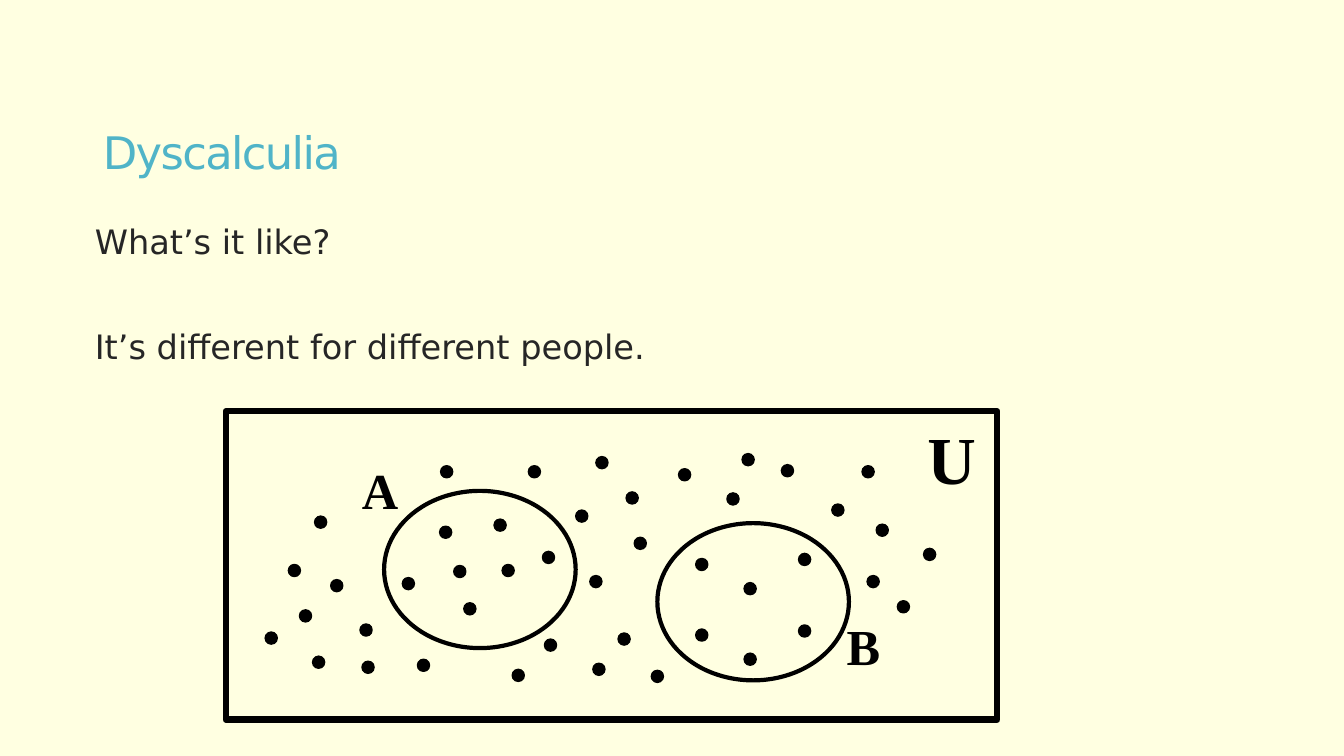
from pptx import Presentation
from pptx.dml.color import RGBColor
from pptx.enum.shapes import MSO_SHAPE as Shape
from pptx.enum.text import MSO_ANCHOR as Anchor, MSO_AUTO_SIZE as AutoSize, PP_ALIGN as Align
from pptx.oxml.xmlchemy import OxmlElement
from pptx.util import Inches, Pt

COLORS = {"paper": "FFFFE1", "title": "50B4C8", "body": "262626", "ink": "000000"}
DOT_SIZE = 0.12
SET_SIZE = (1.9, 1.56)

DOTS = {
    "A": [(4.36, 5.22), (4.9, 5.15), (5.38, 5.47), (3.99, 5.73), (4.5, 5.61),
          (4.98, 5.6), (4.6, 5.98)],
    "B": [(6.9, 5.54), (7.92, 5.49), (7.38, 5.78), (6.9, 6.24), (7.92, 6.2),
          (7.38, 6.48)],
    "outside": [
        (4.37, 4.62), (5.24, 4.62), (5.91, 4.53), (6.73, 4.65), (7.36, 4.5),
        (7.75, 4.61), (8.55, 4.62), (6.21, 4.88), (7.21, 4.89), (8.25, 5),
        (5.71, 5.06), (3.12, 5.12), (8.69, 5.2), (6.29, 5.33), (9.16, 5.44),
        (2.86, 5.6), (5.85, 5.71), (8.6, 5.71), (3.28, 5.75), (8.9, 5.96),
        (2.97, 6.05), (3.57, 6.19), (2.63, 6.27), (6.13, 6.28), (5.4, 6.34),
        (3.1, 6.51), (4.14, 6.54), (3.59, 6.56), (5.88, 6.58), (5.08, 6.64),
        (6.46, 6.65)],
}
SETS = [(3.81, 4.87), (6.52, 5.19)]
LABELS = [("U", 48, (9.1, 4.09, 0.69, 0.91)),
          ("A", 36, (3.49, 4.51, 0.57, 0.71)),
          ("B", 36, (8.3, 6.05, 0.54, 0.71))]


def apply(target, formats):
    for attribute, value in formats.items():
        setattr(target, attribute, value)


class VennSlide:
    """Slide with a title, a list and a diagram of sets, in one style."""

    def __init__(self, deck):
        self.slide = deck.slides.add_slide(deck.slide_layouts[1])
        background = self.slide.background.fill
        background.solid()
        background.fore_color.rgb = self.color("paper")

    def color(self, key):
        return RGBColor.from_string(COLORS[key])

    def place(self, holder, box):
        apply(holder, dict(zip(("left", "top", "width", "height"), map(Inches, box))))

    def style(self, paragraph, key, **formats):
        apply(paragraph.font, formats)
        paragraph.font.color.rgb = self.color(key)

    def title(self, wording, box):
        heading = self.slide.shapes.title
        self.place(heading, box)
        heading.text_frame.text = wording
        apply(heading.text_frame, {"vertical_anchor": Anchor.MIDDLE, "auto_size": AutoSize.NONE})
        line = heading.text_frame.paragraphs[0]
        apply(line, {"alignment": Align.LEFT, "line_spacing": 0.85})
        run = line.runs[0]
        self.style(run, "title", name="DejaVu Sans", size=Pt(32))
        run.font._element.set("spc", "-120")

    def body(self, entries, box):
        statements = self.slide.placeholders[1]
        self.place(statements, box)
        statements.text_frame.text = "\n".join(wording for wording, _ in entries)
        statements.text_frame.auto_size = AutoSize.NONE
        for line, (_, gap) in zip(statements.text_frame.paragraphs, entries):
            apply(line, {"line_spacing": 0.85, "space_before": Pt(gap)})
            properties = line._p.get_or_add_pPr()
            properties.set("marL", str(Inches(0.1)))
            properties.set("indent", "0")
            properties.append(OxmlElement("a:buNone"))
            self.style(line.runs[0], "body", name="DejaVu Sans", size=Pt(24))

    def outline(self, kind, box, weight, filled=False):
        figure = self.slide.shapes.add_shape(kind, *map(Inches, box))
        figure.shadow.inherit = False
        figure.line.width = Pt(weight)
        figure.line.color.rgb = self.color("ink")
        if filled:
            figure.fill.solid()
            figure.fill.fore_color.rgb = self.color("ink")
        else:
            figure.fill.background()

    def label(self, letter, size, box):
        frame = self.slide.shapes.add_textbox(*map(Inches, box)).text_frame
        frame.text = letter
        apply(frame, {"word_wrap": False, "auto_size": AutoSize.SHAPE_TO_FIT_TEXT})
        self.style(frame.paragraphs[0].runs[0], "ink",
                   name="Times New Roman", size=Pt(size), bold=True)


def main():
    deck = Presentation()
    apply(deck, {"slide_width": Inches(13.33), "slide_height": Inches(7.5)})
    venn = VennSlide(deck)
    venn.title("Dyscalculia", (0.92, 0.84, 11.67, 1.41))
    venn.body([("What’s it like?", 13), ("It’s different for different people.", 51)],
              (0.74, 2.2, 11.76, 4.12))
    venn.outline(Shape.RECTANGLE, (2.24, 4.08, 7.65, 3.06), 4.5)
    for corner in SETS:
        venn.outline(Shape.OVAL, corner + SET_SIZE, 3)
    for members in DOTS.values():
        for corner in members:
            venn.outline(Shape.OVAL, corner + (DOT_SIZE, DOT_SIZE), 1, filled=True)
    for letter, size, box in LABELS:
        venn.label(letter, size, box)
    deck.save("out.pptx")


if __name__ == "__main__":
    main()
